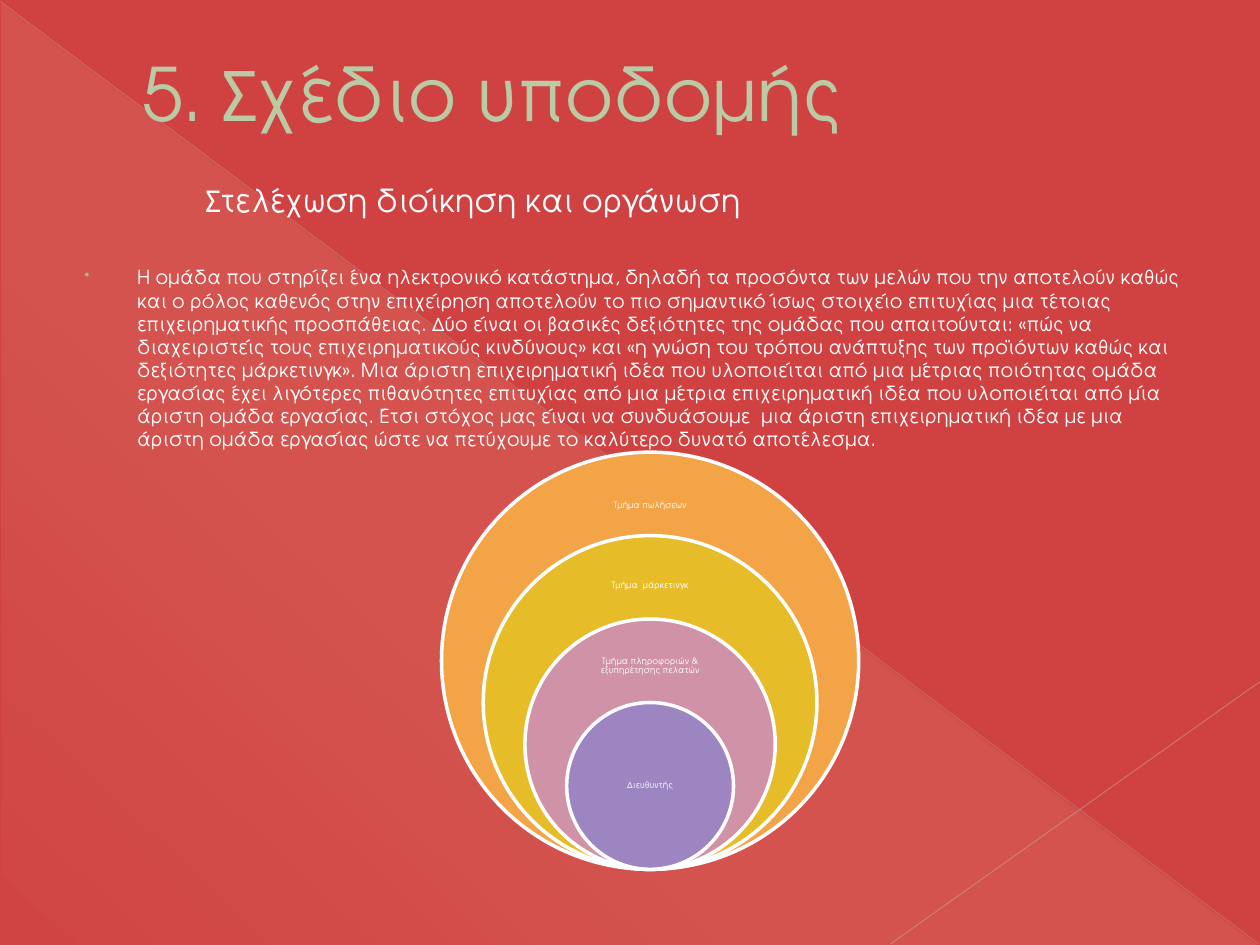
from dataclasses import dataclass

from lxml import etree
from pptx import Presentation
from pptx import util as u
from pptx.dml.color import RGBColor
from pptx.enum import shapes, text
from pptx.oxml import ns

Pt = u.Pt
FONT = "TeX Gyre Adventor"
WHITE = RGBColor(0xFF, 0xFF, 0xFF)
RED = RGBColor(0xD0, 0x42, 0x42)
CREAM = RGBColor(0xFE, 0xFA, 0xC9)
SAGE = RGBColor(0xB9, 0xCA, 0xA5)
MOSS = RGBColor(0x72, 0x7D, 0x65)
LEAF = RGBColor(0xA5, 0xB5, 0x92)
GREY = RGBColor(0xBA, 0xBD, 0xB3)
PALE = RGBColor(0xC1, 0xC4, 0xBC)
ORANGE = RGBColor(0xF3, 0xA4, 0x47)
GOLD = RGBColor(0xE7, 0xBC, 0x29)
PINK = RGBColor(0xD0, 0x92, 0xA7)
VIOLET = RGBColor(0x9C, 0x85, 0xC0)

BODY = (
    "Η ομάδα που στηρίζει ένα ηλεκτρονικό κατάστημα, δηλαδή τα προσόντα των "
    "μελών που την αποτελούν καθώς και ο ρόλος καθενός στην επιχείρηση αποτελούν "
    "το πιο σημαντικό ίσως στοιχείο επιτυχίας μια τέτοιας επιχειρηματικής "
    "προσπάθειας. Δύο είναι οι βασικές δεξιότητες της ομάδας που απαιτούνται: "
    "«πώς να διαχειριστείς τους επιχειρηματικούς κινδύνους» και «η γνώση του "
    "τρόπου ανάπτυξης των προϊόντων καθώς και δεξιότητες μάρκετινγκ». Μια άριστη "
    "επιχειρηματική ιδέα που υλοποιείται από μια μέτριας ποιότητας ομάδα εργασίας "
    "έχει λιγότερες πιθανότητες επιτυχίας από μια μέτρια επιχειρηματική ιδέα που "
    "υλοποιείται από μία άριστη ομάδα εργασίας. Έτσι στόχος μας είναι να "
    "συνδυάσουμε  μια άριστη επιχειρηματική ιδέα με μια άριστη ομάδα εργασίας "
    "ώστε να πετύχουμε το καλύτερο δυνατό αποτέλεσμα."
)


@dataclass
class Box:
    x: float
    y: float
    w: float
    h: float


@dataclass
class Ring:
    label: str
    fill: RGBColor
    scale: float
    box: Box


@dataclass
class Ray:
    x1: float
    y1: float
    x2: float
    y2: float
    color: RGBColor
    width: float
    alpha: int


MID, BASE, SIZE = 371.5, 496.8, 238.4  # shared centre, bottom and largest width
RINGS = [
    Ring("Τμήμα πωλήσεων", ORANGE, 1.0, Box(338.4, 270.7, 66.2, 36)),
    Ring("Τμήμα  μάρκετινγκ", GOLD, 0.8, Box(338.4, 317.5, 66.2, 34.6)),
    Ring("Τμήμα πληροφοριών & εξυπηρέτησης πελατών", PINK, 0.6,
         Box(338.4, 364.3, 66.2, 32.4)),
    Ring("Διευθυντής", VIOLET, 0.4, Box(337.7, 425.5, 67.7, 47.5)),
]
RAYS = [
    Ray(0, 0.7, 719.3, 539.3, GREY, 0.39, 35),
    Ray(720, 389.5, 509, 539.3, PALE, 0.47, 45),
]


def add_sub(node, tag: str, **attrs: str):
    return etree.SubElement(node, ns.qn(tag), **attrs)


def add_text(tree, box: Box, words: str, size: float, color: RGBColor = WHITE):
    item = tree.add_textbox(Pt(box.x), Pt(box.y), Pt(box.w), Pt(box.h))
    frame = item.text_frame
    frame.word_wrap = True
    frame.text = words
    par = frame.paragraphs[0]
    font = par.runs[0].font
    font.name, font.size = FONT, Pt(size)
    font.color.rgb = color
    return frame, par


def set_indent(par, left: float, first: float):
    props = par._p.get_or_add_pPr()
    props.set("marL", str(Pt(left)))
    props.set("indent", str(Pt(first)))
    return props


def add_wedge(tree) -> None:
    wedge = tree.add_shape(shapes.MSO_SHAPE.RIGHT_TRIANGLE,
                           Pt(0.7), Pt(1.4), Pt(718.6), Pt(538.6))
    wedge.shadow.inherit = False
    wedge.line.fill.background()
    wedge.fill.gradient()
    wedge.fill.gradient_angle = 227
    stops = wedge._element.spPr.find(".//" + ns.qn("a:gsLst"))
    for old in list(stops):
        stops.remove(old)
    for pos, alpha in ((0, 10), (70, 8), (100, 1)):
        stop = add_sub(stops, "a:gs", pos=str(pos * 1000))
        tint = add_sub(stop, "a:srgbClr", val=str(CREAM))
        add_sub(tint, "a:alpha", val=str(alpha * 1000))


def add_ray(tree, ray: Ray) -> None:
    line = tree.add_connector(shapes.MSO_CONNECTOR.STRAIGHT, Pt(ray.x1),
                              Pt(ray.y1), Pt(ray.x2), Pt(ray.y2))
    line.line.color.rgb = ray.color
    line.line.width = Pt(ray.width)
    props = line._element.spPr
    add_sub(props.find(".//" + ns.qn("a:srgbClr")), "a:alpha",
            val=str(ray.alpha * 1000))
    add_sub(props, "a:effectLst")


def add_ring(tree, ring: Ring) -> None:
    size = SIZE * ring.scale
    disc = tree.add_shape(shapes.MSO_SHAPE.OVAL, Pt(MID - size / 2),
                          Pt(BASE - size), Pt(size), Pt(size))
    disc.shadow.inherit = False
    disc.fill.solid()
    disc.fill.fore_color.rgb = ring.fill
    disc.line.color.rgb = WHITE
    disc.line.width = Pt(2)
    frame, par = add_text(tree, ring.box, ring.label, 5)
    frame.vertical_anchor = text.MSO_ANCHOR.MIDDLE
    frame.margin_left = frame.margin_right = Pt(2.8)
    frame.margin_top = frame.margin_bottom = Pt(2.8)
    par.alignment = text.PP_ALIGN.CENTER
    par.line_spacing = 0.9
    par.space_after = Pt(1.75)


def main() -> None:
    deck = Presentation()
    deck.slide_width, deck.slide_height = Pt(720), Pt(540)
    slide = deck.slides.add_slide(deck.slide_layouts[6])
    tree = slide.shapes

    # Backdrop
    slide.background.fill.solid()
    slide.background.fill.fore_color.rgb = RED
    add_wedge(tree)
    for ray in RAYS:
        add_ray(tree, ray)

    # Title with a thin outline
    frame, par = add_text(tree, Box(36, 0, 648, 105.8),
                          "5. Σχέδιο υποδομής", 42, SAGE)
    frame.vertical_anchor = text.MSO_ANCHOR.MIDDLE
    set_indent(par, 38.2, 0)
    edge = etree.Element(ns.qn("a:ln"), w=str(Pt(0.5)))
    add_sub(add_sub(edge, "a:solidFill"), "a:srgbClr", val=str(MOSS))
    par.runs[0].font._element.insert(0, edge)

    # Bulleted body
    frame, par = add_text(tree, Box(36, 148.3, 648, 360), BODY, 11)
    par.space_before = Pt(2.2)
    props = set_indent(par, 35.3, -30.2)
    add_sub(add_sub(props, "a:buClr"), "a:srgbClr", val=str(LEAF))
    add_sub(props, "a:buSzPct", val="80000")
    add_sub(props, "a:buChar", char="•")

    # Subtitle
    frame, par = add_text(tree, Box(110.9, 100.1, 374.4, 28.8),
                          "Στελέχωση διοίκηση και οργάνωση", 18)
    frame.auto_size = text.MSO_AUTO_SIZE.SHAPE_TO_FIT_TEXT

    # Nested circles
    group = tree.add_group_shape()
    for ring in RINGS:
        add_ring(group.shapes, ring)

    deck.save("out.pptx")


if __name__ == "__main__":
    main()
